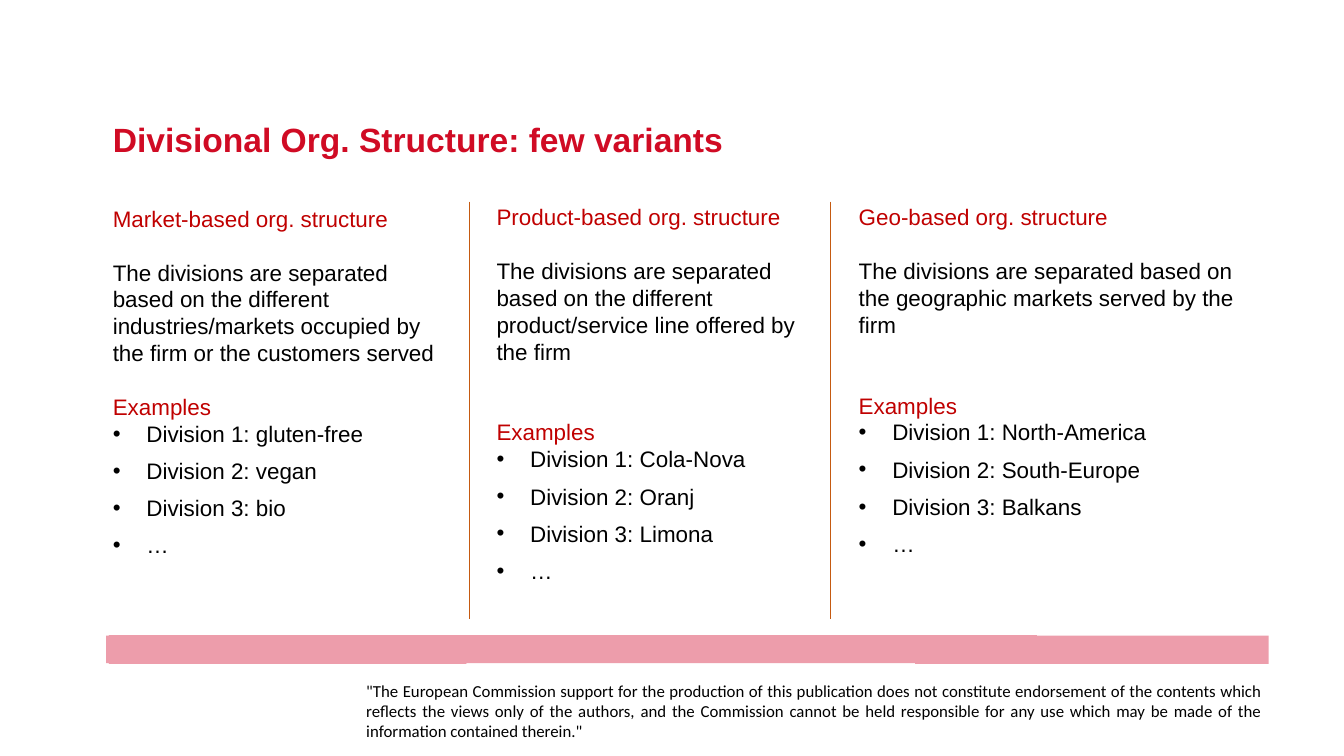
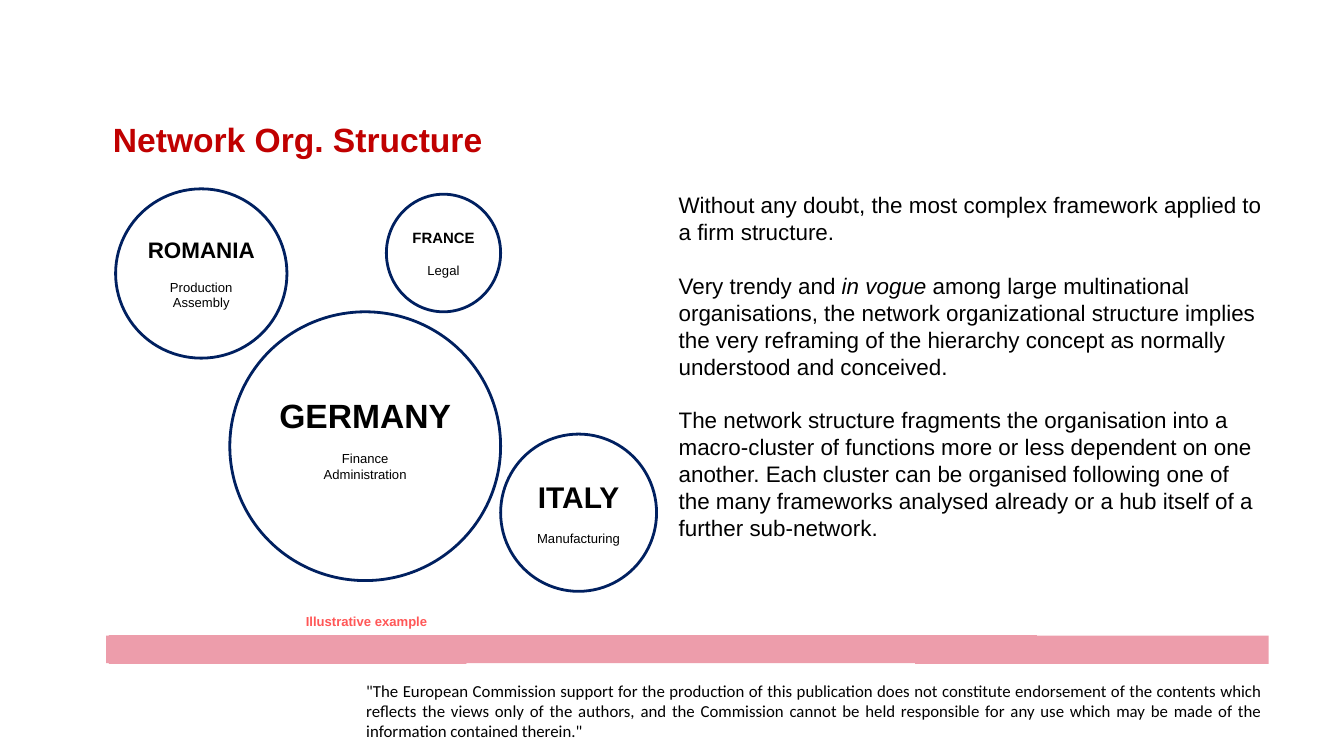
"""Builds two slides on divisional and network organisation structures."""
import dataclasses
import typing

import lxml.etree
import pptx
import pptx.dml.color
import pptx.enum.shapes
import pptx.enum.text
import pptx.oxml.ns
import pptx.util

Inches = pptx.util.Inches
ALIGN = pptx.enum.text.PP_ALIGN
ANCHOR = pptx.enum.text.MSO_ANCHOR

BLACK = "000000"
WHITE = "FFFFFF"
RED = "C00000"
TITLE_RED = "D00B24"
CORAL = "FF5757"
PINK = "ED9DAB"
NAVY = "002060"
ORANGE = "C55A11"

BODY_GAP = 28.8
BULLET_GAP = 11
SMALL_GAP = 16.8
MARGIN = 1.58
DIVIDER_TOP, DIVIDER_BOTTOM = 3, 9.21
DIVIDERS = (6.98, 12.36)

BAND_OUTLINE = (
    (18.88, 9.46), (15.43, 9.46), (15.43, 9.45), (1.62, 9.45),
    (1.62, 9.46), (1.58, 9.46), (1.58, 9.87), (1.62, 9.87),
    (1.62, 9.88), (6.94, 9.88), (6.94, 9.87), (13.62, 9.87),
    (13.62, 9.88), (18.88, 9.88),
)
DISCLAIMER = (
    '"The European Commission support for the production of this publication does not '
    "constitute endorsement of the contents which reflects the views only of the authors, "
    "and the Commission cannot be held responsible for any use which may be made of the "
    'information contained therein."'
)


@dataclasses.dataclass(frozen=True)
class Box:
    """Position and size in inches."""

    left: float
    top: float
    width: float
    height: float

    def lengths(self) -> tuple:
        """Return the four values as lengths."""
        return tuple(Inches(v) for v in (self.left, self.top, self.width, self.height))


@dataclasses.dataclass(frozen=True)
class Variant:
    """One column describing a divisional structure."""

    box: Box
    heading: str
    description: str
    divisions: tuple
    gap_lines: int = 2


@dataclasses.dataclass(frozen=True)
class Country:
    """One circle of the network."""

    box: Box
    name: str
    size: int
    functions: tuple
    bottom_inset: float = 0.05


VARIANTS = (
    Variant(
        Box(1.58, 3, 5.22, 5.4),
        "Market-based org. structure",
        "The divisions are separated based on the different industries/markets "
        "occupied by the firm or the customers served",
        ("gluten-free", "vegan", "bio"),
        gap_lines=1,
    ),
    Variant(
        Box(7.29, 2.98, 5.09, 5.87),
        "Product-based org. structure",
        "The divisions are separated based on the different product/service line "
        "offered by the firm",
        ("Cola-Nova", "Oranj", "Limona"),
    ),
    Variant(
        Box(12.68, 2.98, 5.9, 5.4),
        "Geo-based org. structure",
        "The divisions are separated based on the geographic markets served by the firm",
        ("North-America", "South-Europe", "Balkans"),
    ),
)

COUNTRIES = (
    Country(Box(3.42, 4.64, 4.03, 4), "GERMANY", 36, ("Finance", "Administration"), 0.28),
    Country(Box(5.75, 2.89, 1.7, 1.75), "FRANCE", 16, ("Legal",)),
    Country(Box(7.45, 6.46, 2.32, 2.34), "ITALY", 32, ("Manufacturing",)),
    Country(Box(1.72, 2.81, 2.55, 2.52), "ROMANIA", 24, ("Production", "Assembly")),
)

NETWORK_TEXT = (
    "Without any doubt, the most complex framework applied to a firm structure.",
    "Very trendy and in vogue among large multinational organisations, the network "
    "organizational structure implies the very reframing of the hierarchy concept as "
    "normally understood and conceived.",
    "The network structure fragments the organisation into a macro-cluster of functions "
    "more or less dependent on one another. Each cluster can be organised following one "
    "of the many frameworks analysed already or a hub itself of a further sub-network.",
)


def rgb(value: str) -> pptx.dml.color.RGBColor:
    """Turn a hex string into a colour."""
    return pptx.dml.color.RGBColor.from_string(value)


def add_bullet(paragraph: typing.Any) -> None:
    """Give a paragraph a hanging black bullet."""
    properties = paragraph._p.get_or_add_pPr()
    properties.set("marL", str(Inches(0.5)))
    properties.set("indent", str(-Inches(0.5)))
    qn = pptx.oxml.ns.qn
    color = lxml.etree.SubElement(properties, qn("a:buClr"))
    lxml.etree.SubElement(color, qn("a:srgbClr")).set("val", BLACK)
    lxml.etree.SubElement(properties, qn("a:buFont")).set("typeface", "Arial")
    lxml.etree.SubElement(properties, qn("a:buChar")).set("char", "•")


def write(
    frame: typing.Any,
    text: str,
    *,
    size: float = 24,
    color: str = BLACK,
    font: str = "Arial",
    bold: bool = False,
    italic: str = "",
    align: typing.Any = ALIGN.LEFT,
    before: float = 0,
    spacing: typing.Optional[float] = None,
    bullet: bool = False,
) -> None:
    """Add a formatted paragraph, setting the given phrase in italics."""
    first = frame.paragraphs[0]
    paragraph = frame.add_paragraph() if first.runs else first
    if bullet:
        add_bullet(paragraph)
    paragraph.alignment = align
    paragraph.space_before = pptx.util.Pt(before)
    if spacing:
        paragraph.line_spacing = spacing
    parts = text.partition(italic) if italic else (text,)
    for part in filter(None, parts):
        run = paragraph.add_run()
        run.text = part
        run.font.size = pptx.util.Pt(size)
        run.font.name = font
        run.font.bold = bold
        run.font.italic = part == italic
        run.font.color.rgb = rgb(color)


def set_frame(frame: typing.Any, anchor: typing.Any = ANCHOR.TOP) -> typing.Any:
    """Wrap a text frame, fix its size and anchor it."""
    frame.word_wrap = True
    frame.auto_size = pptx.enum.text.MSO_AUTO_SIZE.NONE
    frame.vertical_anchor = anchor
    return frame


def add_text_box(slide: typing.Any, box: Box) -> typing.Any:
    """Add a text box and return its frame."""
    return set_frame(slide.shapes.add_textbox(*box.lengths()).text_frame)


def add_band(slide: typing.Any) -> None:
    """Draw the pink band above the footer."""
    start, *rest = [(Inches(x), Inches(y)) for x, y in BAND_OUTLINE]
    builder = slide.shapes.build_freeform(*start)
    builder.add_line_segments(rest, close=True)
    band = builder.convert_to_shape()
    band.shadow.inherit = False
    band.fill.solid()
    band.fill.fore_color.rgb = rgb(PINK)
    band.line.fill.background()


def add_footer(slide: typing.Any) -> None:
    """Write the disclaimer below the band."""
    frame = add_text_box(slide, Box(5.45, 10.15, 13.33, 0.76))
    frame.margin_left = frame.margin_right = frame.margin_top = frame.margin_bottom = 0
    write(frame, DISCLAIMER, size=18, font="Calibri", align=ALIGN.JUSTIFY, spacing=0.98)


def add_titled_slide(presentation: typing.Any, title: str, color: str) -> typing.Any:
    """Add a slide with band, footer and title."""
    slide = presentation.slides.add_slide(presentation.slide_layouts[5])
    add_band(slide)
    add_footer(slide)
    shape = slide.shapes.title
    shape.left, shape.top, shape.width, shape.height = Box(MARGIN, 1.72, 13.77, 0.71).lengths()
    write(set_frame(shape.text_frame), title, size=36, color=color, bold=True)
    return slide


def add_variant(slide: typing.Any, variant: Variant) -> None:
    """Write one column with its example divisions."""
    frame = add_text_box(slide, variant.box)
    write(frame, variant.heading, color=RED)
    write(frame, variant.description, before=BODY_GAP)
    write(frame, "Examples", color=RED, before=BODY_GAP * variant.gap_lines)
    items = [f"Division {n}: {name}" for n, name in enumerate(variant.divisions, 1)]
    for index, item in enumerate(items + ["…"]):
        write(frame, item, bullet=True, before=BULLET_GAP if index else 0)


def add_divider(slide: typing.Any, x: float) -> None:
    """Draw a thin vertical line between columns."""
    line = slide.shapes.add_connector(
        pptx.enum.shapes.MSO_CONNECTOR.STRAIGHT,
        Inches(x), Inches(DIVIDER_TOP), Inches(x), Inches(DIVIDER_BOTTOM),
    )
    line.line.color.rgb = rgb(ORANGE)
    line.line.width = pptx.util.Pt(0.75)
    lxml.etree.SubElement(line._element.spPr, pptx.oxml.ns.qn("a:effectLst"))


def add_country(slide: typing.Any, country: Country) -> None:
    """Draw one circle with its name and functions."""
    circle = slide.shapes.add_shape(
        pptx.enum.shapes.MSO_SHAPE.OVAL, *country.box.lengths()
    )
    circle.shadow.inherit = False
    circle.fill.solid()
    circle.fill.fore_color.rgb = rgb(WHITE)
    circle.line.color.rgb = rgb(NAVY)
    circle.line.width = pptx.util.Pt(3)
    frame = set_frame(circle.text_frame, ANCHOR.MIDDLE)
    frame.margin_bottom = Inches(country.bottom_inset)
    write(frame, country.name, size=country.size, bold=True, align=ALIGN.CENTER)
    for index, function in enumerate(country.functions):
        gap = 0 if index else SMALL_GAP
        write(frame, function, size=14, align=ALIGN.CENTER, before=gap)


def build_divisional_slide(presentation: typing.Any) -> None:
    """Build the slide comparing three divisional variants."""
    slide = add_titled_slide(
        presentation, "Divisional Org. Structure: few variants", TITLE_RED
    )
    for variant in VARIANTS:
        add_variant(slide, variant)
    for x in DIVIDERS:
        add_divider(slide, x)


def build_network_slide(presentation: typing.Any) -> None:
    """Build the slide showing the network of countries."""
    slide = add_titled_slide(presentation, "Network Org. Structure", RED)
    frame = add_text_box(slide, Box(10, 2.8, 8.92, 5.35))
    for index, text in enumerate(NETWORK_TEXT):
        write(frame, text, italic="in vogue", before=BODY_GAP if index else 0)
    for country in COUNTRIES:
        add_country(slide, country)
    caption = add_text_box(slide, Box(4.23, 9.08, 2.45, 0.34))
    write(caption, "Illustrative example", size=14, color=CORAL, bold=True, align=ALIGN.CENTER)


def main() -> None:
    """Build and save the presentation."""
    presentation = pptx.Presentation()
    presentation.slide_width = Inches(20)
    presentation.slide_height = Inches(11.25)
    build_divisional_slide(presentation)
    build_network_slide(presentation)
    presentation.save("out.pptx")


if __name__ == "__main__":
    main()
